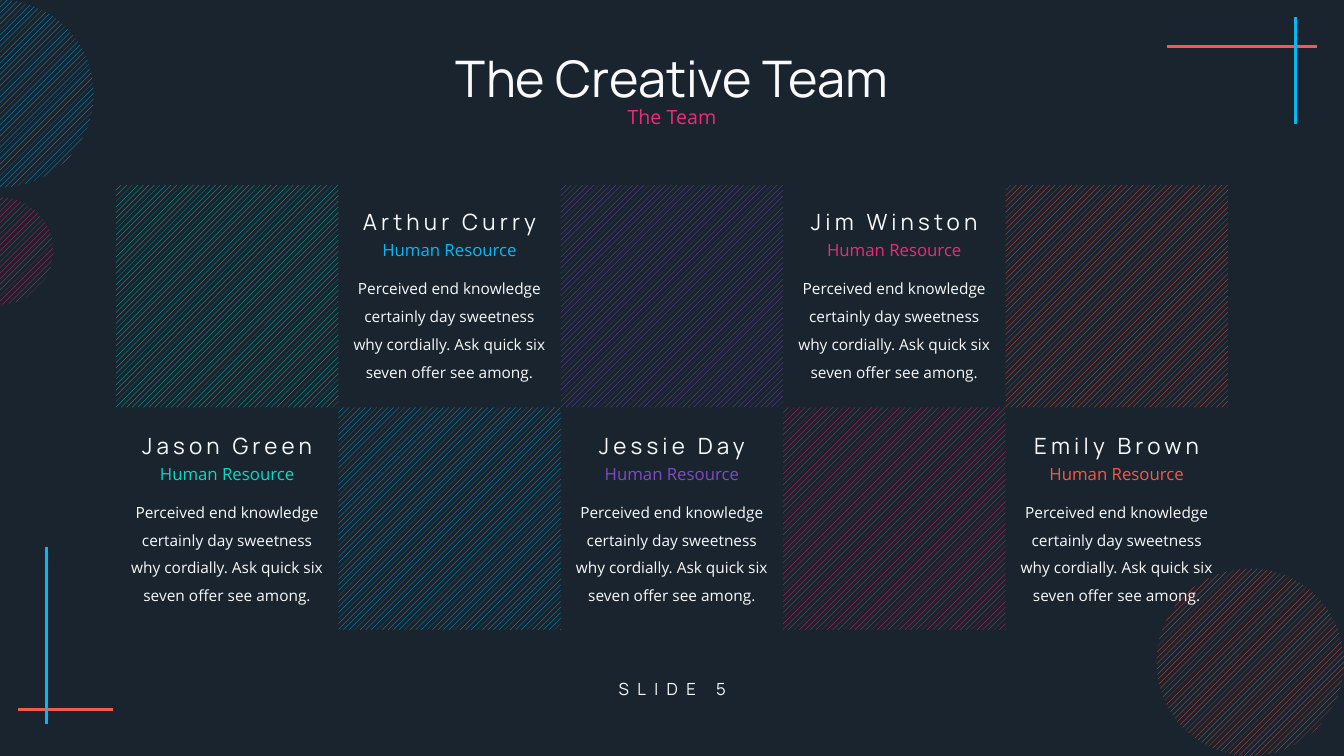
from dataclasses import dataclass

from lxml.etree import SubElement
from pptx import Presentation
from pptx.dml.color import RGBColor
from pptx.enum.dml import MSO_PATTERN
from pptx.enum.shapes import MSO_CONNECTOR, MSO_SHAPE
from pptx.enum.text import MSO_ANCHOR, PP_ALIGN
from pptx.oxml.ns import qn
from pptx.util import Pt

TITLE = "The Creative Team"
SUBTITLE = "The Team"
FOOTER = "SLIDE 5"
ROLE = "Human Resource"
BIO = (
    "Perceived end knowledge certainly day sweetness why cordially. "
    "Ask quick six seven offer see among."
)
TEAM = [
    ("Jason Green", "teal"),
    ("Arthur Curry", "blue"),
    ("Jessie Day", "purple"),
    ("Jim Winston", "pink"),
    ("Emily Brown", "coral"),
]
CROSS_LINES = [
    ((833.3, 33), (940.5, 33), "coral"),
    ((925.5, 88.5), (925.5, 12.2), "blue"),
    ((80.7, 506.7), (12.9, 506.7), "coral"),
    ((33, 391), (33, 517), "blue"),
]
CIRCLES = [
    (826.1, 406.1, 133.9, "coral"),
    (-38.2, 141.1, 76.3, "pink"),
    (-67, 0, 133.9, "blue"),
]


@dataclass(frozen=True)
class Theme:
    background = "1A242E"
    white = "F9F9F9"
    teal = "08DAC6"
    blue = "05B9F6"
    purple = "7E4CC7"
    pink = "EF2A79"
    coral = "F75847"
    heading_font = "Manrope"
    body_font = "Open Sans"
    title_size = 36
    subtitle_size = 14
    name_size = 16
    role_size = 12
    bio_size = 11
    footer_size = 12
    line_width = 2

    def color(self, name):
        return RGBColor.from_string(getattr(self, name))


THEME = Theme()
SLIDE_WIDTH, SLIDE_HEIGHT = 960, 540
TILE = 158.86
GRID_LEFT = (SLIDE_WIDTH - TILE * len(TEAM)) / 2
GRID_TOP = 132.2
TEXT_PITCH = 159.6
NAME_TOP, ROLE_TOP, BIO_TOP = 145.4, 167.9, 189.5


def add_cross_line(slide, start, end, color):
    line = slide.shapes.add_connector(
        MSO_CONNECTOR.STRAIGHT, *(Pt(value) for value in start + end)
    )
    line.line.color.rgb = THEME.color(color)
    line.line.width = Pt(THEME.line_width)
    SubElement(line._element.spPr, qn("a:effectLst"))


def add_hatched(slide, outline, left, top, side, color):
    hatched = slide.shapes.add_shape(outline, Pt(left), Pt(top), Pt(side), Pt(side))
    hatched.shadow.inherit = False
    hatched.line.fill.background()
    hatched.fill.patterned()
    hatched.fill.pattern = MSO_PATTERN.WIDE_UPWARD_DIAGONAL
    hatched.fill.fore_color.rgb = THEME.color(color)
    hatched.fill.back_color.rgb = THEME.color("background")


def add_text(slide, text, box, size, color="white", font=THEME.body_font,
             tracking=0, line_spacing=None, space_before=0, anchor=MSO_ANCHOR.TOP):
    frame = slide.shapes.add_textbox(*(Pt(value) for value in box)).text_frame
    frame.word_wrap = True
    frame.vertical_anchor = anchor
    frame.text = text
    paragraph = frame.paragraphs[0]
    paragraph.alignment = PP_ALIGN.CENTER
    paragraph.line_spacing = line_spacing
    paragraph.space_before = Pt(space_before)
    run = paragraph.runs[0]
    run.font.size = Pt(size)
    run.font.name = font
    run.font.color.rgb = THEME.color(color)
    if tracking:
        run.font._element.set("spc", str(tracking * 100))


def add_member(slide, column, name, color):
    left = GRID_LEFT + column * TILE
    tile_row = column % 2
    shift = (1 - tile_row) * TEXT_PITCH
    add_hatched(slide, MSO_SHAPE.RECTANGLE, left, GRID_TOP + tile_row * TILE, TILE, color)
    add_text(slide, name, (left, NAME_TOP + shift, TILE, 26.6), THEME.name_size,
             font=THEME.heading_font, tracking=3)
    add_text(slide, ROLE, (left, ROLE_TOP + shift, TILE, 21.8), THEME.role_size, color)
    add_text(slide, BIO, (left, BIO_TOP + shift, TILE, 87), THEME.bio_size,
             line_spacing=1.5)


def main():
    deck = Presentation()
    deck.slide_width, deck.slide_height = Pt(SLIDE_WIDTH), Pt(SLIDE_HEIGHT)
    slide = deck.slides.add_slide(deck.slide_layouts[6])
    slide.background.fill.solid()
    slide.background.fill.fore_color.rgb = THEME.color("background")

    for start, end, color in CROSS_LINES:
        add_cross_line(slide, start, end, color)
    for left, top, side, color in CIRCLES:
        add_hatched(slide, MSO_SHAPE.OVAL, left, top, side, color)
    add_text(slide, FOOTER, (405.3, 477.2, 149.8, 29.5), THEME.footer_size,
             font=THEME.heading_font, tracking=6, anchor=MSO_ANCHOR.MIDDLE)

    add_text(slide, SUBTITLE, (32.5, 61.2, 895, 46), THEME.subtitle_size, "pink",
             line_spacing=0.9, space_before=10, anchor=MSO_ANCHOR.MIDDLE)
    add_text(slide, TITLE, (32.5, 35.3, 895, 46), THEME.title_size,
             font=THEME.heading_font, line_spacing=0.9, space_before=10,
             anchor=MSO_ANCHOR.MIDDLE)
    for column, (name, color) in enumerate(TEAM):
        add_member(slide, column, name, color)

    deck.save("out.pptx")


if __name__ == "__main__":
    main()
